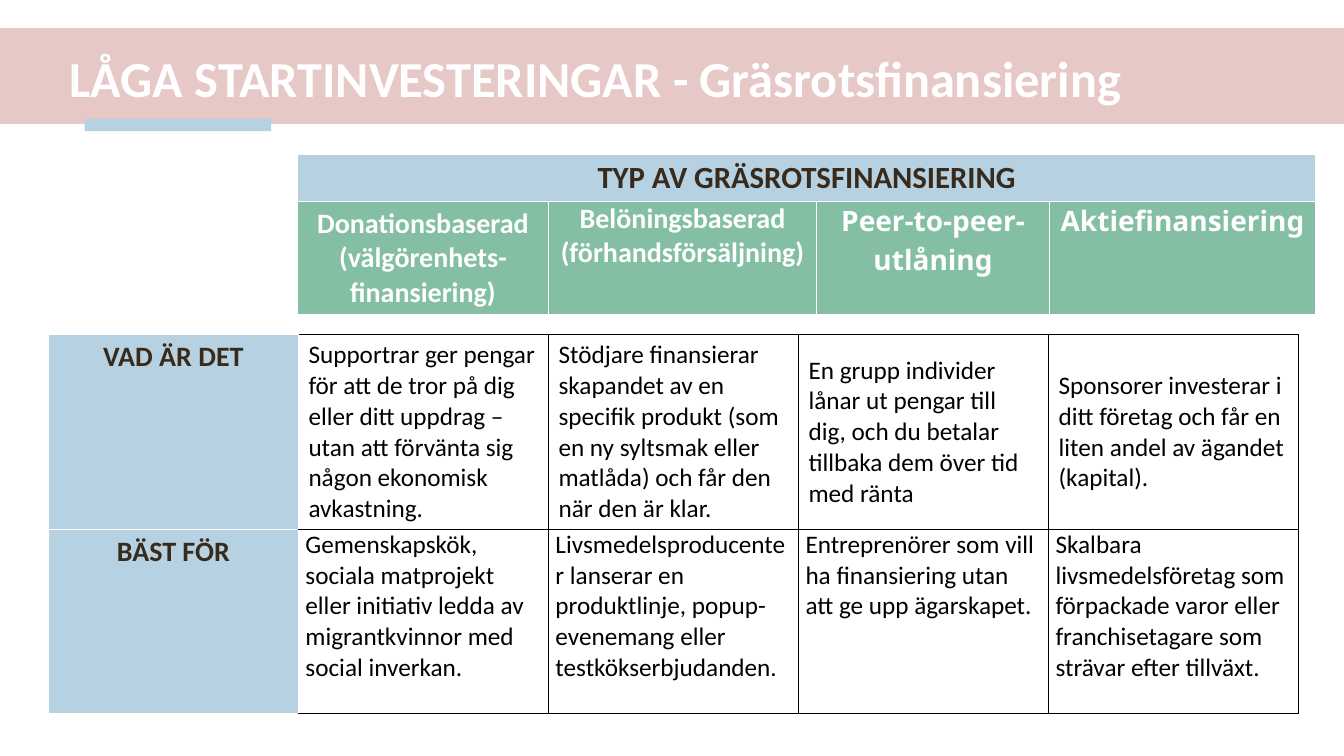
from lxml import etree
from pptx import Presentation
from pptx.dml.color import RGBColor as RGB
from pptx.enum.shapes import MSO_SHAPE as SHAPE
from pptx.enum.text import MSO_ANCHOR as ANCHOR, PP_ALIGN as ALIGN
from pptx.oxml.ns import qn
from pptx.util import Inches, Pt

COLORS = {"pink": "E6C8C7", "blue": "B6D1E1", "green": "84BFA4",
          "brown": "382B1B", "white": "FFFFFF", "black": "000000"}

TYPES = [("Donationsbaserad (välgörenhets-finansiering)", "Calibri"),
         ("Belöningsbaserad (förhandsförsäljning)", "Calibri"),
         ("Peer-to-peer-utlåning", "Noto Sans"),
         ("Aktiefinansiering", "Noto Sans")]

ROWS = [
    ("VAD ÄR DET", [
        "Supportrar ger pengar för att de tror på dig eller ditt uppdrag – utan att förvänta sig någon ekonomisk avkastning.",
        "Stödjare finansierar skapandet av en specifik produkt (som en ny syltsmak eller matlåda) och får den när den är klar.",
        "En grupp individer lånar ut pengar till dig, och du betalar tillbaka dem över tid med ränta",
        "Sponsorer investerar i ditt företag och får en liten andel av ägandet (kapital)."]),
    ("BÄST FÖR", [
        "Gemenskapskök, sociala matprojekt eller initiativ ledda av migrantkvinnor med social inverkan.",
        "Livsmedelsproducenter lanserar en produktlinje, popup-evenemang eller testkökserbjudanden.",
        "Entreprenörer som vill ha finansiering utan att ge upp ägarskapet.",
        "Skalbara livsmedelsföretag som förpackade varor eller franchisetagare som strävar efter tillväxt."]),
]


class Deck:
    """Holds the style and the current slide, and draws its elements."""

    def __init__(self, prs):
        self.s = prs.slides.add_slide(prs.slide_layouts[5])

    def color(self, name):
        return RGB.from_string(COLORS[name])

    def style(self, p, size, color, bold=True, font="Calibri", align=ALIGN.LEFT):
        p.alignment = align
        p.font.size, p.font.bold, p.font.name = Pt(size), bold, font
        p.font.color.rgb = self.color(color)

    def bar(self, x, y, w, h, color):
        sp = self.s.shapes.add_shape(SHAPE.RECTANGLE, Inches(x), Inches(y), Inches(w), Inches(h))
        sp.shadow.inherit = False
        sp.fill.solid()
        sp.fill.fore_color.rgb = self.color(color)
        sp.line.fill.background()

    def title(self, text, x, y, w, h):
        sp = self.s.shapes.title
        sp.left, sp.top, sp.width, sp.height = Inches(x), Inches(y), Inches(w), Inches(h)
        tf = sp.text_frame
        tf.text, tf.word_wrap, tf.vertical_anchor = text, True, ANCHOR.MIDDLE
        p = tf.paragraphs[0]
        p.line_spacing = 0.9
        self.style(p, 36, "white")

    def table(self, x, y, widths, heights):
        frame = self.s.shapes.add_table(len(heights), len(widths), Inches(x), Inches(y),
                                        Inches(sum(widths)), Inches(sum(heights)))
        table = frame.table
        table.first_row = table.horz_banding = False
        for column, w in zip(table.columns, widths):
            column.width = Inches(w)
        for row, h in zip(table.rows, heights):
            row.height = Inches(h)
        return table

    def cell(self, cell, text, size, color, fill=None, borders=("white",) * 4,
             anchor=ANCHOR.TOP, tight=False, **font):
        cell.text = text
        cell.vertical_anchor = anchor
        if tight:
            cell.margin_left = cell.margin_right = Inches(0.07)
            cell.margin_top = cell.margin_bottom = 0
        self.borders(cell, borders)
        if fill:
            cell.fill.solid()
            cell.fill.fore_color.rgb = self.color(fill)
        else:
            cell.fill.background()
        self.style(cell.text_frame.paragraphs[0], size, color, **font)

    def borders(self, cell, colors):
        pr = cell._tc.get_or_add_tcPr()
        for side, color in zip("LRTB", colors):
            ln = etree.SubElement(pr, qn(f"a:ln{side}"), w=str(Pt(1)))
            fill = etree.SubElement(ln, qn("a:solidFill"))
            etree.SubElement(fill, qn("a:srgbClr"), val=COLORS[color])


def main():
    prs = Presentation()
    prs.slide_width, prs.slide_height = Inches(13.33), Inches(7.5)
    deck = Deck(prs)

    deck.bar(0, 0.28, 13.33, 0.95, "pink")
    deck.bar(0.84, 1.18, 1.85, 0.12, "blue")
    deck.title("LÅGA STARTINVESTERINGAR - Gräsrotsfinansiering", 0.59, 0.33, 11.93, 0.95)
    tree = deck.s.shapes._spTree
    tree.append(deck.s.shapes.title._element)

    details = deck.table(0.48, 3.32, [2.48] * 5, [1.93, 1.83])
    for i, (label, texts) in enumerate(ROWS):
        deck.cell(details.cell(i, 0), label, 20, "brown", "blue", align=ALIGN.CENTER)
        for j, text in enumerate(texts, 1):
            left = "white" if j == 1 else "black"
            deck.cell(details.cell(i, j), text, 18, "black", bold=False, tight=i == 1,
                      borders=(left, "black", "black", "black"),
                      anchor=ANCHOR.TOP if i else ANCHOR.MIDDLE)

    types = deck.table(2.95, 1.53, [2.49, 2.66, 2.31, 2.64], [0.47, 1.12])
    types.cell(0, 0).merge(types.cell(0, 3))
    deck.cell(types.cell(0, 0), "TYP AV GRÄSROTSFINANSIERING", 22, "brown", "blue",
              align=ALIGN.CENTER)
    for j, (text, font) in enumerate(TYPES):
        deck.cell(types.cell(1, j), text, 20, "white", "green", tight=j > 0,
                  font=font, align=ALIGN.CENTER)

    prs.save("out.pptx")


if __name__ == "__main__":
    main()
